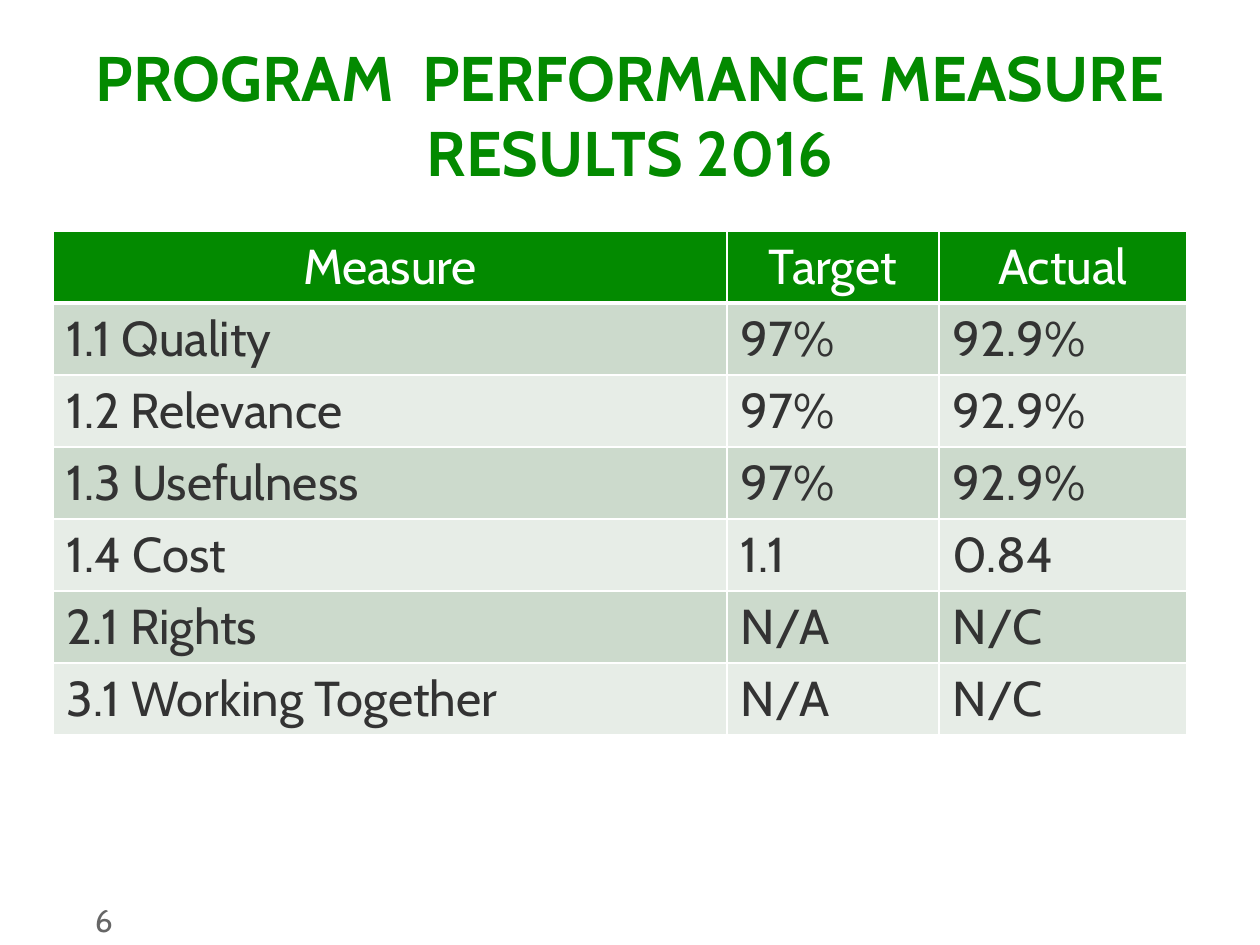
import pptx
import pptx.dml.color
import pptx.enum.text
import pptx.oxml
import pptx.oxml.ns
import pptx.util

INK = {"green": "038A00", "white": "FFFFFF", "dark": "333333",
       "grey": "666666", "band": "CCDACC", "pale": "E7EDE7"}
ALIGN = pptx.enum.text.PP_ALIGN
ROWS = [
    ("Measure", "Target", "Actual"),
    ("1.1 Quality", "97%", "92.9%"),
    ("1.2 Relevance", "97%", "92.9%"),
    ("1.3 Usefulness", "97%", "92.9%"),
    ("1.4 Cost", "1.1", "0.84"),
    ("2.1 Rights", "N/A", "N/C"),
    ("3.1 Working Together", "N/A", "N/C"),
]


def px(n):
    return pptx.util.Emu(round(n * 914400 / 126))


def rgb(name):
    return pptx.dml.color.RGBColor.from_string(INK[name])


class Page:
    """Draws styled elements on one slide."""

    def __init__(self, slide, font):
        self.slide = slide
        self.font = font

    def label(self, frame, text, size, ink, align=ALIGN.LEFT, bold=False):
        frame.text = text
        para = frame.paragraphs[0]
        para.alignment = align
        for run in para.runs:
            run.font.name = self.font
            run.font.size = pptx.util.Pt(size)
            run.font.bold = bold
            run.font.color.rgb = rgb(ink)

    def text(self, box, text, size, ink, align=ALIGN.LEFT, bold=False, inset=0):
        frame = self.slide.shapes.add_textbox(*map(px, box)).text_frame
        frame.word_wrap = True
        frame.margin_left = frame.margin_right = px(inset)
        self.label(frame, text, size, ink, align, bold)

    def border(self, cell, widths):
        props = cell._tc.get_or_add_tcPr()
        for spot, (side, width) in enumerate(zip("LRTB", widths)):
            line = pptx.oxml.parse_xml(
                f'<a:ln{side} {pptx.oxml.ns.nsdecls("a")} w="{pptx.util.Pt(width)}">'
                f'<a:solidFill><a:srgbClr val="{INK["white"]}"/></a:solidFill>'
                f'</a:ln{side}>')
            props.insert(spot, line)

    def table(self, left, top, cols, height, rows, size):
        box = (left, top, sum(cols), height * len(rows))
        grid = self.slide.shapes.add_table(len(rows), len(cols), *map(px, box)).table
        for col, width in zip(grid.columns, cols):
            col.width = px(width)
        for i, row in enumerate(rows):
            grid.rows[i].height = px(height)
            head = i == 0
            fill = "green" if head else ("pale", "band")[i % 2]
            for j, text in enumerate(row):
                cell = grid.cell(i, j)
                cell.margin_left = cell.margin_right = px(14)
                cell.fill.solid()
                cell.fill.fore_color.rgb = rgb(fill)
                self.border(cell, (1, 1, 1, 3 if head else 1))
                self.label(cell.text_frame, text, size,
                           "white" if head else "dark",
                           ALIGN.CENTER if head else ALIGN.LEFT)


def main():
    deck = pptx.Presentation()
    deck.slide_width, deck.slide_height = px(1260), px(945)
    page = Page(deck.slides.add_slide(deck.slide_layouts[6]), "Cabin")
    page.text((63, 32, 1134, 78), "PROGRAM  PERFORMANCE MEASURE RESULTS 2016",
              36, "green", ALIGN.CENTER, True, 12)
    page.table(53, 231, (674, 212, 248), 72, ROWS, 28)
    page.text((95, 895, 73, 50), "6", 18, "grey")
    deck.save("out.pptx")


if __name__ == "__main__":
    main()
